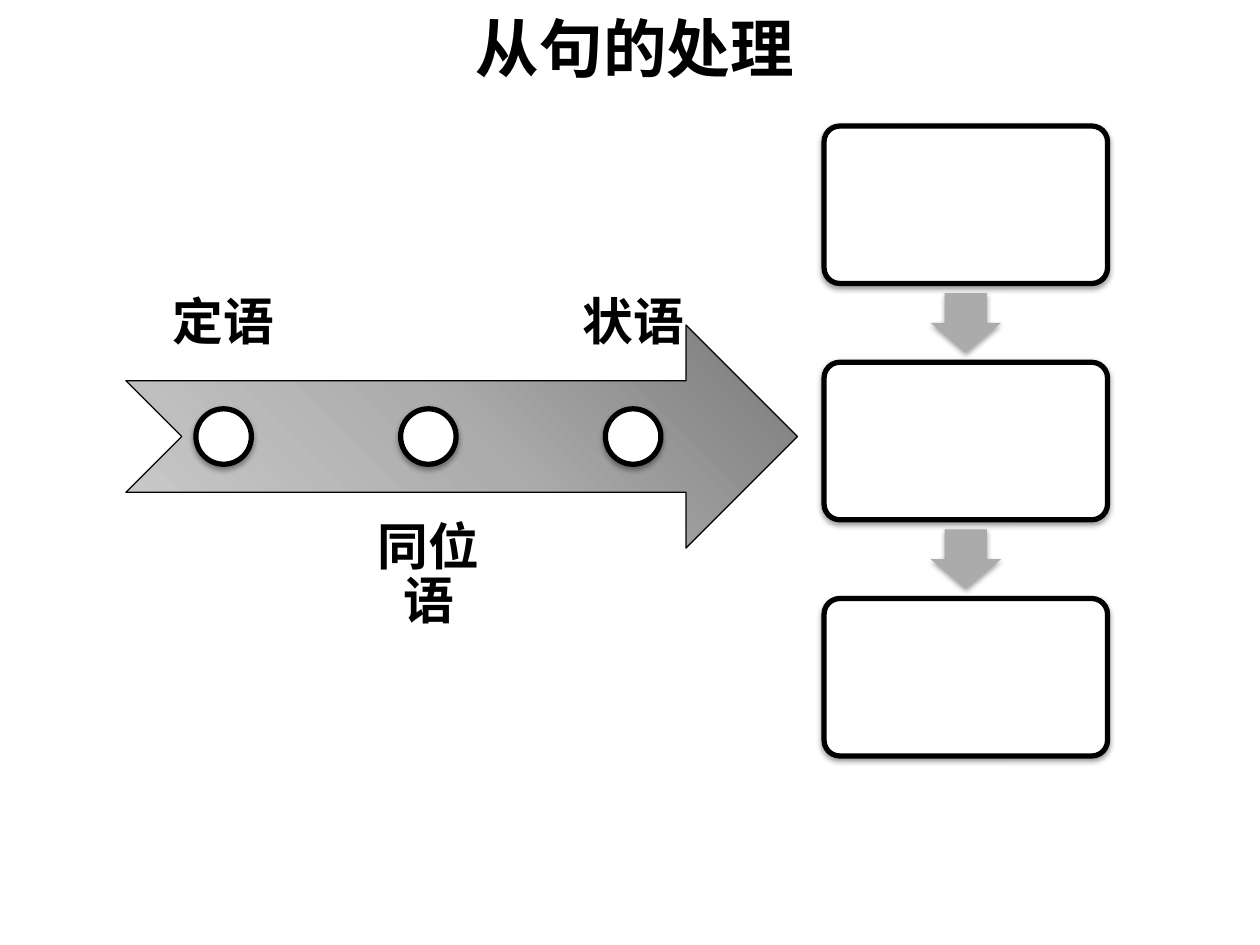
from copy import deepcopy

from lxml import etree
from pptx import Presentation
from pptx import util as u
from pptx.dml.color import RGBColor
from pptx.enum import shapes, text
from pptx.oxml.ns import qn

FONT = "Noto Sans CJK SC"
KIND = shapes.MSO_SHAPE
ANCHOR = text.MSO_ANCHOR


def color(code):
    return RGBColor.from_string(code)


def apply(target, values):
    for name, value in values.items():
        setattr(target, name, value)


def box(*sizes):
    return [u.Inches(size) for size in sizes]


def write(frame, words, size, anchor, inset=(0.1, 0.05)):
    side, edge = box(*inset)
    apply(frame, dict(word_wrap=True, auto_size=text.MSO_AUTO_SIZE.NONE,
                      vertical_anchor=anchor, margin_left=side,
                      margin_right=side, margin_top=edge, margin_bottom=edge))
    para = frame.paragraphs[0]
    para.alignment = text.PP_ALIGN.CENTER
    run = para.add_run()
    run.text = words
    apply(run.font, dict(name=FONT, size=u.Pt(size), bold=True))
    run.font.color.rgb = color("000000")
    # East Asian typeface
    face = etree.SubElement(run.font._element, qn("a:ea"))
    face.set("typeface", FONT)
    return para


def shade(shape):
    shape.shadow.inherit = False
    effects = shape._element.spPr.find(qn("a:effectLst"))
    outer = etree.SubElement(effects, qn("a:outerShdw"), blurRad="40000",
                             dist="20000", dir="5400000", rotWithShape="0")
    tint = etree.SubElement(outer, qn("a:srgbClr"), val="000000")
    etree.SubElement(tint, qn("a:alpha"), val="38000")


def draw(slide, kind, place, fill, line=None):
    shape = slide.shapes.add_shape(kind, *box(*place))
    shape.fill.solid()
    shape.fill.fore_color.rgb = color(fill)
    if line:
        shape.line.color.rgb = color("000000")
        shape.line.width = u.Pt(line)
    else:
        shape.line.fill.background()
    shade(shape)
    return shape


def blend(shape, codes, angle):
    shape.fill.gradient()
    shape.fill.gradient_angle = angle
    stops = shape._element.spPr.find(qn("a:gradFill")).find(qn("a:gsLst"))
    stops.insert(1, deepcopy(stops[0]))
    for i, (stop, code) in enumerate(zip(shape.fill.gradient_stops, codes)):
        stop.position = i / (len(codes) - 1)
        stop.color.rgb = color(code)


def title(slide, left, top, width, height):
    head = slide.shapes.title
    names = ("left", "top", "width", "height")
    apply(head, dict(zip(names, box(left, top, width, height))))
    write(head.text_frame, "从句的处理", 36.3, ANCHOR.MIDDLE)


def timeline(slide, left, top, width, height):
    # Arrow band
    band = draw(slide, KIND.NOTCHED_RIGHT_ARROW,
                (left, top, width, height), "ACACAC", 0.75)
    blend(band, ("797979", "ACACAC", "CCCCCC"), 225)
    band.shadow.inherit = False
    effects = band._element.spPr.find(qn("a:effectLst"))
    for effect in list(effects):
        effects.remove(effect)

    # Labels alternate above and below, each with its dot
    span, dot = 1.55, 0.44
    for i, words in enumerate(("定语", "同位语", "状语")):
        x = left + i * 1.625
        below = i % 2
        y = top + height * 0.75 if below else top - height * 0.75
        label = slide.shapes.add_textbox(*box(x, y, span, height))
        anchor = ANCHOR.TOP if below else ANCHOR.BOTTOM
        para = write(label.text_frame, words, 29, anchor, (0.23, 0.23))
        para.line_spacing = 0.9
        draw(slide, KIND.OVAL, (x + (span - dot) / 2,
             top + (height - dot) / 2, dot, dot), "FFFFFF", 3)


def steps(slide, left, top, width, height):
    count, tall = 3, 1.25
    pitch = (height - tall) / (count - 1)
    long, wide = 0.47, 0.56
    for i in range(count):
        y = top + i * pitch
        card = draw(slide, KIND.ROUNDED_RECTANGLE,
                    (left, y, width, tall), "FFFFFF", 3)
        card.adjustments[0] = 0.1
        # Arrow centred in the gap to the next card
        if i < count - 1:
            middle = y + (tall + pitch) / 2
            arrow = draw(slide, KIND.RIGHT_ARROW,
                         (left + (width - long) / 2, middle - wide / 2,
                          long, wide), "ABABAB")
            arrow.rotation = 90
            arrow.adjustments[0] = 0.6
            arrow.adjustments[1] = 0.5


def main():
    deck = Presentation()
    deck.slide_width, deck.slide_height = box(10, 7.5)
    slide = deck.slides.add_slide(deck.slide_layouts[5])
    title(slide, 0.25, 0.08, 9.58, 0.58)
    timeline(slide, 1, 2.58, 5.33, 1.77)
    steps(slide, 6.54, 1, 2.25, 5)
    deck.save("out.pptx")


if __name__ == "__main__":
    main()
